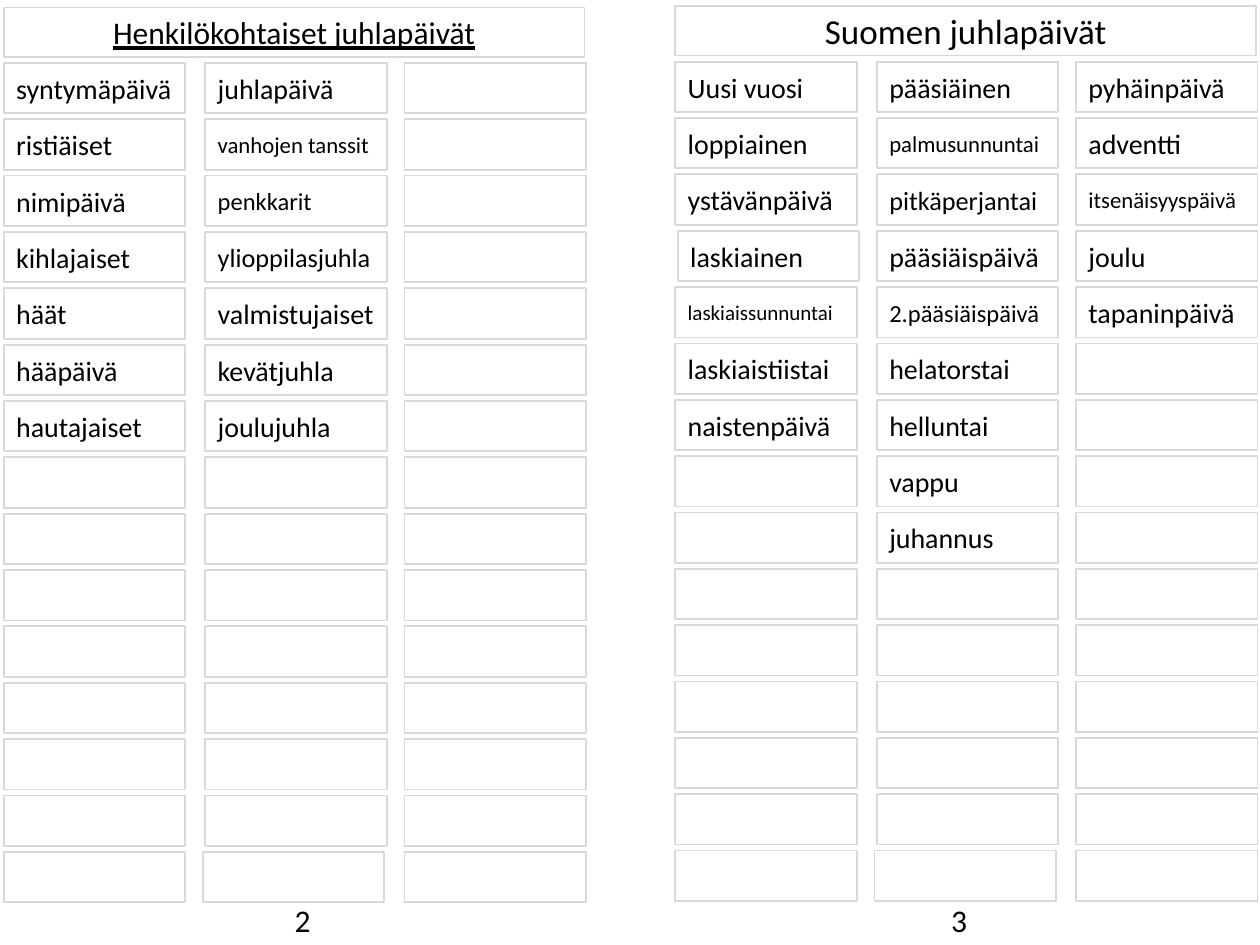
from pptx import Presentation
from pptx import util as u
from pptx.dml.color import RGBColor
from pptx.enum import shapes, text

COLORS = {"text": "000000", "border": "D9D9D9"}
FONT = "Calibri"
WORD_SIZE = 16
ROWS = 15

PAGES = [
    {
        "heading": "Henkilökohtaiset juhlapäivät",
        "heading_font": {"size": u.Pt(18), "underline": True},
        "left": 0.03, "heading_top": 0.06, "grid_top": 0.5,
        "columns": [
            ["syntymäpäivä", "ristiäiset", "nimipäivä", "kihlajaiset", "häät",
             "hääpäivä", "hautajaiset"],
            ["juhlapäivä", "vanhojen tanssit", "penkkarit", "ylioppilasjuhla",
             "valmistujaiset", "kevätjuhla", "joulujuhla"],
            [],
        ],
        "number": "2", "number_left": 2.24, "number_width": 0.34,
    },
    {
        "heading": "Suomen juhlapäivät",
        "heading_font": {"size": u.Pt(20)},
        "left": 5.36, "heading_top": 0.05, "grid_top": 0.49,
        "columns": [
            ["Uusi vuosi", "loppiainen", "ystävänpäivä", "laskiainen",
             "laskiaissunnuntai", "laskiaistiistai", "naistenpäivä"],
            ["pääsiäinen", "palmusunnuntai", "pitkäperjantai", "pääsiäispäivä",
             "2.pääsiäispäivä", "helatorstai", "helluntai", "vappu", "juhannus"],
            ["pyhäinpäivä", "adventti", "itsenäisyyspäivä", "joulu", "tapaninpäivä"],
        ],
        "number": "3", "number_left": 7.45, "number_width": 0.43,
    },
]
# Long words are set smaller so that they fit their card
SMALLER_SIZES = {
    "vanhojen tanssit": 13, "penkkarit": 14, "ylioppilasjuhla": 15,
    "laskiaissunnuntai": 12, "palmusunnuntai": 13, "pitkäperjantai": 15,
    "2.pääsiäispäivä": 14, "itsenäisyyspäivä": 13,
}
# Cards standing slightly off the grid, by word or by (column, row)
SHIFTS = {"laskiainen": 0.02, (1, ROWS - 1): -0.02}

COLUMN_OFFSETS = (0, 1.6, 3.18)
CARD_WIDTH, CARD_HEIGHT = 1.44, 0.4
ROW_PITCH = (6.76 - 0.5) / (ROWS - 1)
HEADING_WIDTH, HEADING_HEIGHT = 4.61, 0.39
NUMBER_TOP = 7.1


def color(name):
    return RGBColor.from_string(COLORS[name])


def write(shape, words, align=text.PP_ALIGN.LEFT, **font_format):
    frame = shape.text_frame
    frame.auto_size = text.MSO_AUTO_SIZE.NONE
    frame.word_wrap = True
    frame.vertical_anchor = text.MSO_ANCHOR.MIDDLE
    paragraph = frame.paragraphs[0]
    paragraph.alignment = align
    if words:
        run = paragraph.add_run()
        run.text = words
        run.font.color.rgb = color("text")
        for name, value in {"name": FONT, **font_format}.items():
            setattr(run.font, name, value)


def outline(shape):
    shape.fill.background()
    shape.line.color.rgb = color("border")
    shape.line.width = u.Pt(1)


def add_box(slide, *place):
    box = slide.shapes.add_shape(shapes.MSO_SHAPE.RECTANGLE, *map(u.Inches, place))
    box.shadow.inherit = False
    return box


def add_heading(slide, page):
    place = (page["left"], page["heading_top"], HEADING_WIDTH, HEADING_HEIGHT)
    if page is PAGES[0]:
        heading = slide.shapes.title
        for side, length in zip(("left", "top", "width", "height"), place):
            setattr(heading, side, u.Inches(length))
    else:
        heading = add_box(slide, *place)
    outline(heading)
    write(heading, page["heading"], text.PP_ALIGN.CENTER, **page["heading_font"])


def add_cards(slide, page):
    for column, (offset, words) in enumerate(zip(COLUMN_OFFSETS, page["columns"])):
        for row in range(ROWS):
            word = words[row] if row < len(words) else ""
            shift = SHIFTS.get(word, SHIFTS.get((column, row), 0))
            card = add_box(slide, page["left"] + offset + shift,
                           page["grid_top"] + row * ROW_PITCH,
                           CARD_WIDTH, CARD_HEIGHT)
            outline(card)
            write(card, word, size=u.Pt(SMALLER_SIZES.get(word, WORD_SIZE)))


def add_page_number(slide, page):
    number = slide.shapes.add_textbox(*map(u.Inches, (
        page["number_left"], NUMBER_TOP, page["number_width"], CARD_HEIGHT)))
    write(number, page["number"], size=u.Pt(18))
    number.text_frame.vertical_anchor = text.MSO_ANCHOR.TOP


def main():
    deck = Presentation()
    deck.slide_width, deck.slide_height = u.Inches(10), u.Inches(7.5)
    slide = deck.slides.add_slide(deck.slide_layouts[5])
    for page in PAGES:
        add_page_number(slide, page)
        add_heading(slide, page)
        add_cards(slide, page)
    deck.save("out.pptx")


if __name__ == "__main__":
    main()
